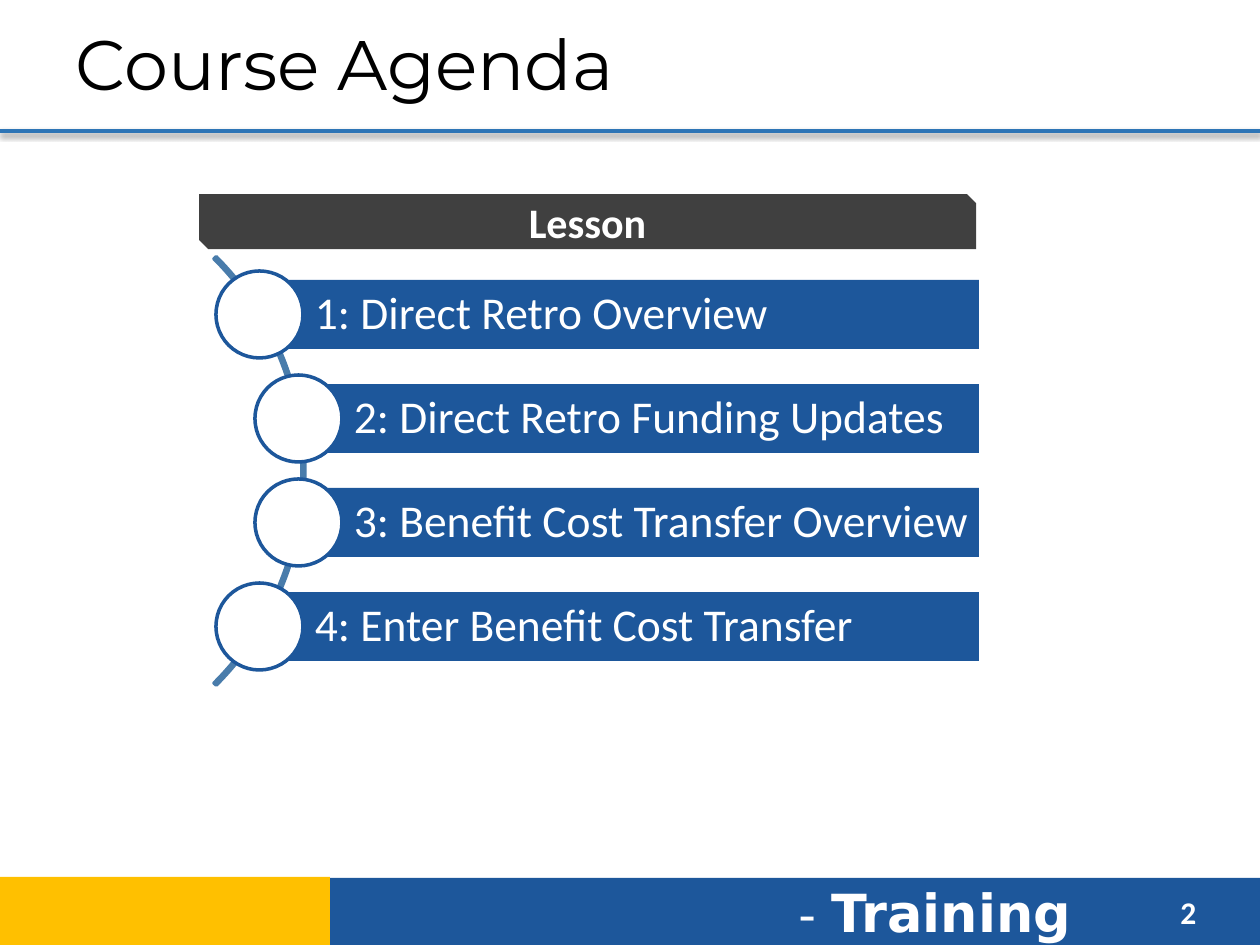
from dataclasses import dataclass
from typing import Any

import lxml.etree
import pptx
import pptx.dml.color
import pptx.enum.shapes
import pptx.enum.text
import pptx.oxml
import pptx.oxml.ns
import pptx.util

RGBColor = pptx.dml.color.RGBColor
SHAPE = pptx.enum.shapes.MSO_SHAPE
ALIGN = pptx.enum.text.PP_ALIGN
ANCHOR = pptx.enum.text.MSO_ANCHOR

WHITE = RGBColor(0xFF, 0xFF, 0xFF)
BLACK = RGBColor(0x00, 0x00, 0x00)
BLUE = RGBColor(0x1D, 0x57, 0x9B)
RULE_BLUE = RGBColor(0x2E, 0x75, 0xB6)
ARC_BLUE = RGBColor(0x49, 0x7C, 0xAB)
GOLD = RGBColor(0xFF, 0xC0, 0x00)
CHARCOAL = RGBColor(0x40, 0x40, 0x40)

EMU_PER_PX = 914400 / 126
BAR_TOP, BAR_PITCH, BAR_HEIGHT, BAR_RIGHT = 280, 104, 69, 979
KNOB_SIZE = 87


@dataclass(frozen=True)
class Box:
    left: int
    top: int
    width: int
    height: int

    def emu(self) -> list[int]:
        return [px(v) for v in (self.left, self.top, self.width, self.height)]


@dataclass(frozen=True)
class Lesson:
    caption: str
    left: int


LESSONS = [
    Lesson("1: Direct Retro Overview", 260),
    Lesson("2: Direct Retro Funding Updates", 299),
    Lesson("3: Benefit Cost Transfer Overview", 299),
    Lesson("4: Enter Benefit Cost Transfer", 260),
]


def px(length: int) -> int:
    return round(length * EMU_PER_PX)


def set_values(target: Any, values: dict[str, Any]) -> None:
    for name, value in values.items():
        setattr(target, name, value)


def write(paragraph: Any, text: str, font: str, size: int,
          color: RGBColor = WHITE, bold: bool = False) -> None:
    run = paragraph.add_run()
    run.text = text
    set_values(run.font, {"name": font, "size": pptx.util.Pt(size), "bold": bold})
    run.font.color.rgb = color


def add_panel(slide: Any, kind: Any, box: Box, fill: RGBColor | None,
              line: RGBColor | None = None) -> Any:
    panel = slide.shapes.add_shape(kind, *box.emu())
    panel.shadow.inherit = False
    if fill is None:
        panel.fill.background()
    else:
        panel.fill.solid()
        panel.fill.fore_color.rgb = fill
    if line is None:
        panel.line.fill.background()
    else:
        panel.line.color.rgb = line
        panel.line.width = pptx.util.Pt(2)
    return panel


def add_label(slide: Any, box: Box) -> Any:
    frame = slide.shapes.add_textbox(*box.emu()).text_frame
    frame.word_wrap = True
    return frame.paragraphs[0]


def add_header(slide: Any) -> None:
    title = slide.shapes.title
    set_values(title, dict(zip(("left", "top", "width", "height"), Box(63, 4, 1134, 117).emu())))
    set_values(title.text_frame, {
        "vertical_anchor": ANCHOR.MIDDLE,
        "word_wrap": True,
        "auto_size": pptx.enum.text.MSO_AUTO_SIZE.NONE,
    })
    heading = title.text_frame.paragraphs[0]
    heading.alignment = ALIGN.LEFT
    write(heading, "Course Agenda", "Montserrat", 40, BLACK)

    rule = slide.shapes.add_connector(
        pptx.enum.shapes.MSO_CONNECTOR.STRAIGHT, 0, px(131), px(1260), px(131))
    rule.line.color.rgb = RULE_BLUE
    rule.line.width = pptx.util.Pt(2.25)
    namespace = pptx.oxml.ns.nsdecls("a")
    rule.element.spPr.append(pptx.oxml.parse_xml(
        f'<a:effectLst {namespace}><a:outerShdw blurRad="39370" dist="20320" '
        'dir="5400000" rotWithShape="0"><a:srgbClr val="000000">'
        '<a:alpha val="38000"/></a:srgbClr></a:outerShdw></a:effectLst>'))


def add_footer(slide: Any) -> None:
    add_panel(slide, SHAPE.RECTANGLE, Box(329, 878, 931, 69), BLUE)
    add_panel(slide, SHAPE.RECTANGLE, Box(-1, 877, 331, 69), GOLD)
    course = add_label(slide, Box(786, 874, 353, 77))
    write(course, "- ", "DejaVu Sans", 28)
    write(course, "Training", "DejaVu Sans", 30, bold=True)
    page_number = add_label(slide, Box(1168, 887, 76, 50))
    write(page_number, "2", "Calibri", 18, bold=True)


def add_lesson(slide: Any, lesson: Lesson, top: int) -> None:
    bar = add_panel(slide, SHAPE.RECTANGLE,
                    Box(lesson.left, top, BAR_RIGHT - lesson.left, BAR_HEIGHT), BLUE)
    set_values(bar.text_frame, {
        "vertical_anchor": ANCHOR.MIDDLE,
        "word_wrap": True,
        "margin_left": px(55),
        "margin_top": px(9),
        "margin_right": px(9),
        "margin_bottom": px(9),
    })
    caption = bar.text_frame.paragraphs[0]
    set_values(caption, {"alignment": ALIGN.LEFT, "line_spacing": 0.9})
    write(caption, lesson.caption, "Calibri", 26)
    inset = (KNOB_SIZE - BAR_HEIGHT) // 2
    add_panel(slide, SHAPE.OVAL,
              Box(lesson.left - KNOB_SIZE // 2 - 1, top - inset, KNOB_SIZE, KNOB_SIZE),
              WHITE, BLUE)


def add_agenda(slide: Any) -> None:
    arc = add_panel(slide, SHAPE.BLOCK_ARC, Box(-301, 168, 606, 606), None, ARC_BLUE)
    for index, value in enumerate((189, 27, 0.005)):
        arc.adjustments[index] = value
    for index, lesson in enumerate(LESSONS):
        add_lesson(slide, lesson, BAR_TOP + index * BAR_PITCH)
    banner = add_panel(slide, SHAPE.SNIP_2_DIAG_RECTANGLE, Box(199, 194, 777, 55), CHARCOAL)
    banner.text_frame.vertical_anchor = ANCHOR.MIDDLE
    heading = banner.text_frame.paragraphs[0]
    heading.alignment = ALIGN.CENTER
    write(heading, "Lesson", "Calibri", 24, bold=True)


def main() -> None:
    presentation = pptx.Presentation()
    set_values(presentation, {"slide_width": px(1260), "slide_height": px(945)})
    slide = presentation.slides.add_slide(presentation.slide_layouts[5])
    add_footer(slide)
    add_header(slide)
    add_agenda(slide)
    presentation.save("out.pptx")


if __name__ == "__main__":
    main()
